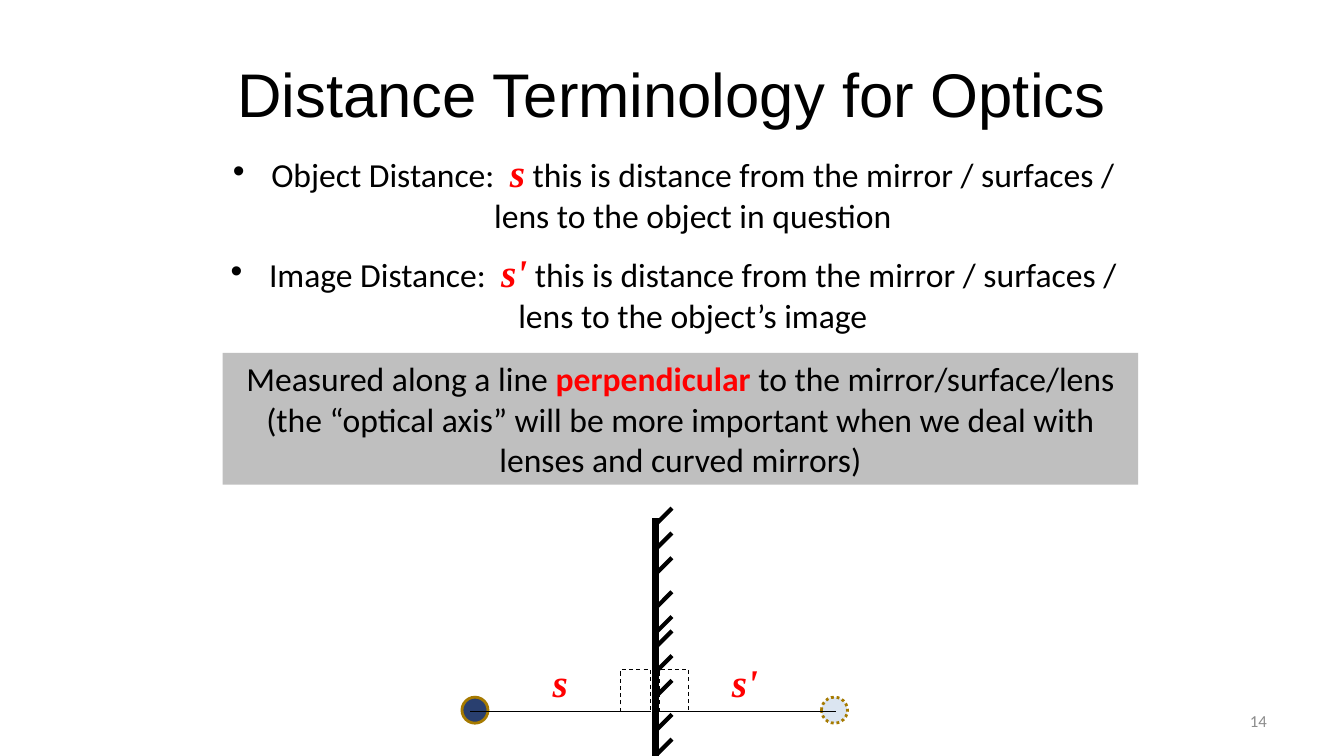
"""Build the slide that defines object and image distance at a plane mirror."""
from dataclasses import dataclass
from itertools import product

from pptx import Presentation
from pptx.dml.color import RGBColor
from pptx.enum.dml import MSO_LINE_DASH_STYLE as Dash
from pptx.enum.shapes import MSO_CONNECTOR as Connector, MSO_SHAPE as Preset
from pptx.enum.text import MSO_ANCHOR as Anchor, MSO_AUTO_SIZE as AutoSize, PP_ALIGN as Align
from pptx.oxml.ns import qn
from pptx.util import Inches, Pt
from lxml.etree import SubElement

COLUMNS, ROWS = 160, 90
WIDTH, HEIGHT = Inches(13.333), Inches(7.5)
MIRROR_X, AXIS_Y = 78, 84.7


@dataclass(frozen=True)
class Theme:
    """Colours as hex strings and text styles as font, size, colour, emphasis."""
    ink: str = "000000"
    band: str = "BFBFBF"
    rim: str = "A67A00"
    object_fill: str = "293F6F"
    image_fill: str = "B9CDE5"
    title: tuple = ("Arial", 44, "000000", False, False)
    body: tuple = ("Calibri", 24, "000000", False, False)
    stress: tuple = ("Calibri", 24, "FF0000", True, False)
    symbol: tuple = ("Times New Roman", 28, "FF0000", True, True)
    number: tuple = ("Calibri", 12, "8C8C8C", False, False)


THEME = Theme()


def col(count):
    """Return the width of a number of grid columns."""
    return round(WIDTH * count / COLUMNS)


def row(count):
    """Return the height of a number of grid rows."""
    return round(HEIGHT * count / ROWS)


def box(left, top, width, height):
    """Turn grid cells into left, top, width and height."""
    return col(left), row(top), col(width), row(height)


def write(paragraph, runs, align=Align.CENTER):
    """Fill a paragraph with runs of text and style."""
    paragraph.alignment = align
    for words, (face, size, colour, bold, italic) in runs:
        run = paragraph.add_run()
        run.text = words
        font = run.font
        font.name, font.size = face, Pt(size)
        font.bold, font.italic = bold, italic
        font.color.rgb = RGBColor.from_string(colour)


def place(placeholder, cells):
    """Move a placeholder to its cells and return its text frame."""
    (placeholder.left, placeholder.top,
     placeholder.width, placeholder.height) = box(*cells)
    frame = placeholder.text_frame
    frame.auto_size = AutoSize.NONE
    return frame


def add_definitions(placeholder, cells, definitions):
    """Write each definition as a centred bullet."""
    frame = place(placeholder, cells)
    for index, (term, symbol, meaning) in enumerate(definitions):
        item = frame.add_paragraph() if index else frame.paragraphs[0]
        item.space_before = Pt(9 if index else 0)
        write(item, [(term, THEME.body), (symbol, THEME.symbol), (meaning, THEME.body)])
        properties = item._p.get_or_add_pPr()
        properties.set("marL", str(Inches(0.38)))
        properties.set("indent", str(-Inches(0.38)))
        SubElement(properties, qn("a:buFont")).set("typeface", "Arial")
        SubElement(properties, qn("a:buChar")).set("char", "•")


def add_label(slide, cells, words, style, align=Align.CENTER, anchor=Anchor.TOP):
    """Add a one-line text box."""
    frame = slide.shapes.add_textbox(*box(*cells)).text_frame
    frame.word_wrap = True
    frame.vertical_anchor = anchor
    write(frame.paragraphs[0], [(words, style)], align)


def add_figure(slide, preset, cells, fill=None, line=None, weight=0.75, dash=None):
    """Add a preset shape with its fill and outline."""
    figure = slide.shapes.add_shape(preset, *box(*cells))
    figure.shadow.inherit = False
    if fill:
        figure.fill.solid()
        figure.fill.fore_color.rgb = RGBColor.from_string(fill)
    else:
        figure.fill.background()
    if line:
        figure.line.color.rgb = RGBColor.from_string(line)
        figure.line.width = Pt(weight)
        figure.line.dash_style = dash
    else:
        figure.line.fill.background()
    return figure


def add_line(slide, start, end, weight):
    """Draw a straight line between two grid points."""
    (x1, y1), (x2, y2) = start, end
    line = slide.shapes.add_connector(Connector.STRAIGHT, col(x1), row(y1), col(x2), row(y2))
    line.line.color.rgb = RGBColor.from_string(THEME.ink)
    line.line.width = Pt(weight)
    SubElement(line._element.spPr, qn("a:effectLst"))


def add_mirror(slide):
    """Draw the mirror and the hatching on its back."""
    add_line(slide, (MIRROR_X, ROWS), (MIRROR_X, 61.7), 5)
    for start, step in product((62.4, 77), (0, 2.95, 5.9, 9.95, 12.9)):
        y = start + step
        add_line(slide, (MIRROR_X + 0.1, y), (MIRROR_X + 2, y - 1.9), 3)


def add_distance(slide, start, label_left, symbol):
    """Draw one distance along the axis with its symbol."""
    add_line(slide, (start, AXIS_Y), (start + 21.5, AXIS_Y), 0.75)
    add_label(slide, (label_left, 77.8, 6, 6.8), symbol, THEME.symbol)


def add_note(slide, cells, runs):
    """Add the shaded note."""
    frame = add_figure(slide, Preset.RECTANGLE, cells, THEME.band).text_frame
    frame.word_wrap = True
    write(frame.paragraphs[0], runs)


def main():
    """Build and save the slide."""
    deck = Presentation()
    deck.slide_width, deck.slide_height = WIDTH, HEIGHT
    slide = deck.slides.add_slide(deck.slide_layouts[1])

    heading = place(slide.shapes.title, (8, 3.6, 144, 15))
    heading.vertical_anchor = Anchor.MIDDLE
    write(heading.paragraphs[0], [("Distance Terminology for Optics", THEME.title)])
    reach = " this is distance from the mirror / surfaces / lens to the object"
    add_definitions(slide.placeholders[1], (24.7, 17, 111, 23.8), [
        ("Object Distance:  ", "s", reach + " in question"),
        ("Image Distance:  ", "s'", reach + "’s image"),
    ])

    image = add_figure(slide, Preset.OVAL, (97.8, 83, 3.1, 3.1), THEME.image_fill,
                       THEME.rim, 2, Dash.ROUND_DOT)
    tint = image._element.spPr.find(qn("a:solidFill"))[0]
    SubElement(tint, qn("a:alpha")).set("val", "50000")
    add_mirror(slide)
    add_figure(slide, Preset.OVAL, (55, 83, 3.1, 3.1), THEME.object_fill, THEME.rim, 2)
    add_distance(slide, 56, 63.7, "s")
    add_distance(slide, MIRROR_X, 85.7, "s'")

    add_note(slide, (26.5, 42, 109, 15.7), [
        ("Measured along a line ", THEME.body),
        ("perpendicular", THEME.stress),
        (" to the mirror/surface/lens (the “optical axis” will be more important "
         "when we deal with lenses and curved mirrors)", THEME.body),
    ])
    add_label(slide, (114.7, 83.4, 37.3, 4.8), "14", THEME.number, Align.RIGHT, Anchor.MIDDLE)
    for corner_left in (73.9, 78.5):
        add_figure(slide, Preset.RECTANGLE, (corner_left, 79.7, 3.5, 5),
                   line=THEME.ink, dash=Dash.DASH)
    deck.save("out.pptx")


if __name__ == "__main__":
    main()
